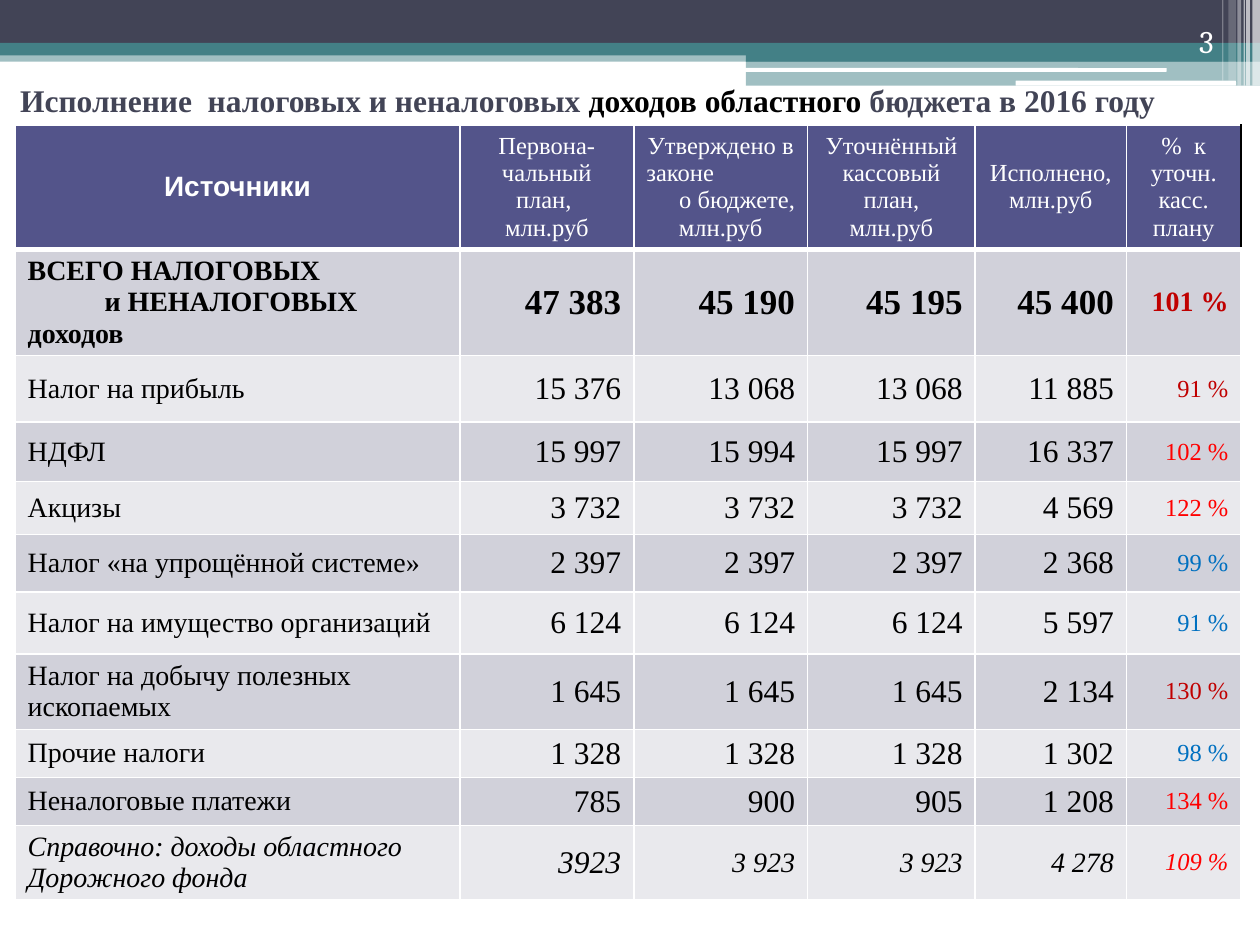
import dataclasses
import pptx
import pptx.dml.color
import pptx.enum.shapes
import pptx.enum.text
import pptx.oxml
import pptx.oxml.ns
import pptx.util
from pptx.util import Inches

RGB = pptx.dml.color.RGBColor.from_string
ALIGN = pptx.enum.text.PP_ALIGN
ANCHOR = pptx.enum.text.MSO_ANCHOR
SHAPE = pptx.enum.shapes.MSO_SHAPE


@dataclasses.dataclass(frozen=True)
class Theme:
    serif: str = "Times New Roman"
    sans: str = "Arial"
    number_font: str = "Cambria"
    white: str = "FFFFFF"
    black: str = "000000"
    dark: str = "424456"
    teal: str = "438086"
    header: str = "53548A"
    bands: tuple = ("D1D1DA", "E9E9ED")
    crimson: str = "C00000"
    red: str = "FF0000"
    blue: str = "0070C0"
    total: int = 20
    amount: int = 18
    label: int = 16
    small: int = 14


theme = Theme()


def add_text(paragraph, text, size, color, **formats):
    run = paragraph.add_run()
    run.text = text
    values = {"name": theme.serif, "size": pptx.util.Pt(size), "bold": False, **formats}
    for attribute, value in values.items():
        setattr(run.font, attribute, value)
    run.font.color.rgb = RGB(color)


def style_cell(cell, fill, borders):
    cell.fill.solid()
    cell.fill.fore_color.rgb = RGB(fill)
    cell.vertical_anchor = ANCHOR.MIDDLE
    properties = cell._tc.get_or_add_tcPr()
    for position, (side, (color, points)) in enumerate(borders.items()):
        properties.insert(position, pptx.oxml.parse_xml(
            f'<a:ln{side} {pptx.oxml.ns.nsdecls("a")} w="{pptx.util.Pt(points)}">'
            f'<a:solidFill><a:srgbClr val="{color}"/></a:solidFill></a:ln{side}>'))


deck = pptx.Presentation()
deck.slide_width, deck.slide_height = Inches(10), Inches(7.5)
slide = deck.slides.add_slide(deck.slide_layouts[5])
heading = slide.shapes.title

header_bands = [
    (0, 0.4, 10, 0.09, theme.teal, 50, SHAPE.RECTANGLE),
    (0, 0, 10, 0.34, theme.dark, 100, SHAPE.RECTANGLE),
    (0, 0.34, 10, 0.1, theme.teal, 100, SHAPE.RECTANGLE),
    (5.92, 0.39, 4.08, 0.1, theme.teal, 100, SHAPE.RECTANGLE),
    (5.92, 0.48, 4.08, 0.2, theme.teal, 50, SHAPE.RECTANGLE),
    (5.91, 0.54, 3.35, 0.03, theme.white, 100, SHAPE.ROUNDED_RECTANGLE),
    (8.06, 0.64, 1.75, 0.04, theme.white, 100, SHAPE.ROUNDED_RECTANGLE),
]
corner_stripes = [
    (9.94, 0.06, 0.68, 65), (9.89, 0.03, 0.68, 65), (9.87, 0.01, 0.68, 60),
    (9.82, 0.03, 0.68, 40), (9.75, 0.06, 0.64, 20), (9.7, 0.01, 0.64, 30),
]
header_bands += [(left, 0, width, height, theme.white, opacity, SHAPE.RECTANGLE)
                 for left, width, height, opacity in corner_stripes]
for left, top, width, height, color, opacity, preset in header_bands:
    band = slide.shapes.add_shape(preset, Inches(left), Inches(top), Inches(width), Inches(height))
    band.shadow.inherit = False
    band.line.fill.background()
    band.fill.solid()
    band.fill.fore_color.rgb = RGB(color)
    if opacity < 100:
        tint = band.fill._xPr.find(".//" + pptx.oxml.ns.qn("a:srgbClr"))
        tint.append(pptx.oxml.parse_xml(
            f'<a:alpha {pptx.oxml.ns.nsdecls("a")} val="{opacity * 1000}"/>'))

slide.shapes._spTree.append(heading._element)
heading_place = {"left": Inches(0), "top": Inches(0.52), "width": Inches(9.49), "height": Inches(0.55)}
for attribute, value in heading_place.items():
    setattr(heading, attribute, value)
heading_format = {"margin_left": Inches(0.16), "vertical_anchor": ANCHOR.MIDDLE, "word_wrap": True,
                  "auto_size": pptx.enum.text.MSO_AUTO_SIZE.NONE}
for attribute, value in heading_format.items():
    setattr(heading.text_frame, attribute, value)
heading_line = heading.text_frame.paragraphs[0]
heading_line.alignment = ALIGN.LEFT
for text, color in [("Исполнение  налоговых и неналоговых ", theme.dark),
                    ("доходов областного ", theme.black),
                    ("бюджета в 2016 году", theme.dark)]:
    add_text(heading_line, text, theme.amount, color, bold=True)

column_titles = [
    [("Источники", ALIGN.CENTER)],
    [("Первона-чальный план,  млн.руб", ALIGN.CENTER)],
    [("Утверждено в", ALIGN.CENTER), ("законе", ALIGN.LEFT),
     ("о бюджете,", ALIGN.RIGHT), ("млн.руб", ALIGN.CENTER)],
    [("Уточнённый кассовый план, млн.руб", ALIGN.CENTER)],
    [("Исполнено, млн.руб", ALIGN.CENTER)],
    [("%  к уточн. касс. плану", ALIGN.CENTER)],
]
revenues = [
    (["ВСЕГО НАЛОГОВЫХ", "и НЕНАЛОГОВЫХ", "доходов"],
     "47 383", "45 190", "45 195", "45 400", "101 %", theme.crimson),
    (["Налог на прибыль"], "15 376", "13 068", "13 068", "11 885", "91 %", theme.crimson),
    (["НДФЛ"], "15 997", "15 994", "15 997", "16 337", "102 %", theme.red),
    (["Акцизы"], "3 732", "3 732", "3 732", "4 569", "122 %", theme.red),
    (["Налог «на упрощённой системе»"], "2 397", "2 397", "2 397", "2 368", "99 %", theme.blue),
    (["Налог на имущество организаций"], "6 124", "6 124", "6 124", "5 597", "91 %", theme.blue),
    (["Налог на добычу полезных ископаемых"], "1 645", "1 645", "1 645", "2 134", "130 %", theme.crimson),
    (["Прочие налоги"], "1 328", "1 328", "1 328", "1 302", "98 %", theme.blue),
    (["Неналоговые платежи"], "785", "900", "905", "1 208", "134 %", theme.red),
    (["Справочно: доходы областного Дорожного фонда"],
     "3923", "3 923", "3 923", "4 278", "109 %", theme.red),
]
column_widths = [3.53, 1.38, 1.38, 1.33, 1.2, 0.91]
row_heights = [0.99, 0.84, 0.53, 0.47, 0.42, 0.46, 0.49, 0.6, 0.38, 0.38, 0.59]
budget = slide.shapes.add_table(len(row_heights), len(column_widths), Inches(0.12), Inches(0.99),
                                Inches(sum(column_widths)), Inches(sum(row_heights))).table
for column, width in zip(budget.columns, column_widths):
    column.width = Inches(width)
for row, height in zip(budget.rows, row_heights):
    row.height = Inches(height)

thin, thick = (theme.white, 1), (theme.white, 3)
for index, lines in enumerate(column_titles):
    cell = budget.cell(0, index)
    right = (theme.black, 1) if index == len(column_titles) - 1 else thin
    style_cell(cell, theme.header, {"L": thin, "R": right, "T": thin, "B": thick})
    title_format = {"name": theme.sans, "bold": True} if index == 0 else {}
    for number, (text, alignment) in enumerate(lines):
        paragraph = cell.text_frame.add_paragraph() if number else cell.text_frame.paragraphs[0]
        paragraph.alignment = alignment
        add_text(paragraph, text, theme.small if index else theme.label, theme.white, **title_format)

for order, (source, *amounts, share, share_color) in enumerate(revenues, 1):
    is_total, is_reference = order == 1, order == len(revenues)
    emphasis = {"bold": is_total, "italic": is_reference}
    for index in range(len(column_widths)):
        top = thick if is_total else thin
        style_cell(budget.cell(order, index), theme.bands[(order - 1) % 2],
                   {"L": thin, "R": thin, "T": top, "B": thin})
    label_frame = budget.cell(order, 0).text_frame
    for number, text in enumerate(source):
        paragraph = label_frame.add_paragraph() if number else label_frame.paragraphs[0]
        if number == 1:
            paragraph._p.get_or_add_pPr().set("marL", str(Inches(0.61)))
        add_text(paragraph, text, theme.label, theme.black, **emphasis)
    for index, text in enumerate([*amounts, share], 1):
        paragraph = budget.cell(order, index).text_frame.paragraphs[0]
        paragraph.alignment = ALIGN.RIGHT
        if index > len(amounts):
            size, color = theme.label if is_total else theme.small, share_color
        else:
            size, color = theme.total if is_total else theme.amount, theme.black
            if is_reference and index > 1:
                size = theme.label
        add_text(paragraph, text, size, color, **emphasis)

page_number = slide.shapes.add_textbox(Inches(9.17), Inches(0), Inches(0.56), Inches(0.52)).text_frame
page_number.word_wrap = True
page_number.vertical_anchor = ANCHOR.BOTTOM
page_number.paragraphs[0].alignment = ALIGN.RIGHT
add_text(page_number.paragraphs[0], "3", theme.amount, theme.white, name=theme.number_font)

deck.save("out.pptx")
